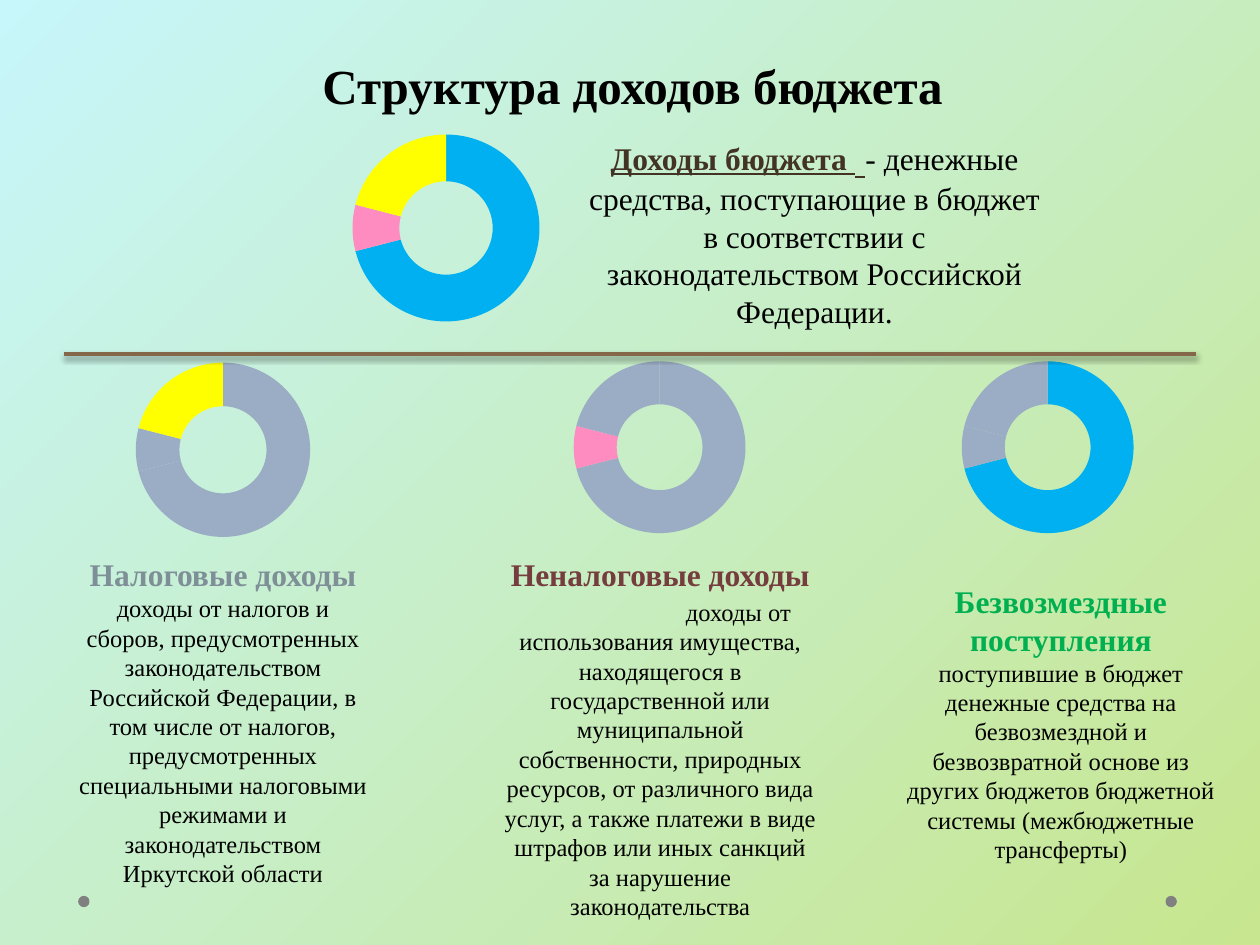
"""Build a slide on the structure of budget revenues with four doughnut charts."""
from dataclasses import dataclass
from typing import Optional

from lxml.etree import SubElement
from pptx import Presentation
from pptx.chart.data import CategoryChartData
from pptx.dml.color import RGBColor
from pptx.enum.chart import XL_CHART_TYPE
from pptx.enum.shapes import MSO_CONNECTOR, MSO_SHAPE
from pptx.enum.text import MSO_ANCHOR, PP_ALIGN
from pptx.oxml.ns import qn
from pptx.util import Inches, Pt


@dataclass(frozen=True)
class Theme:
    font: str = "Times New Roman"
    accent_font: str = "TeX Gyre Pagella"
    title_size: int = 28
    heading_size: int = 18
    gap_size: int = 24
    body_size: int = 14
    chart_size: int = 10
    text: str = "000000"
    term: str = "423324"
    tax: str = "7E8F97"
    non_tax: str = "753D3D"
    transfers: str = "00B050"
    muted: str = "9BADC4"
    blue: str = "00B0F0"
    pink: str = "FE8CC0"
    yellow: str = "FFFF00"
    rule: str = "846648"
    dot: str = "808080"
    background: tuple[str, str] = ("C7F6FB", "C7E68F")


@dataclass(frozen=True)
class Area:
    left: float
    top: float
    width: float
    height: float

    def lengths(self) -> tuple:
        return tuple(Inches(n) for n in (self.left, self.top, self.width, self.height))


@dataclass(frozen=True)
class Doughnut:
    area: Area
    colors: tuple[str, str, str]


@dataclass(frozen=True)
class Revenue:
    doughnut: Doughnut
    area: Area
    heading: str
    color: str
    body: str
    indent: float = 0
    space_before: float = 0


THEME = Theme()
SHARES = (71, 8, 21)
TOTAL = Doughnut(Area(1.77, 0.93, 3.54, 1.76), (THEME.blue, THEME.pink, THEME.yellow))
REVENUES = (
    Revenue(
        Doughnut(Area(0.21, 2.74, 3.12, 1.66), (THEME.muted, THEME.muted, THEME.yellow)),
        Area(0.51, 4.36, 2.52, 2.76), "Налоговые доходы", THEME.tax,
        "доходы от налогов и сборов, предусмотренных законодательством Российской "
        "Федерации, в том числе от налогов, предусмотренных специальными налоговыми "
        "режимами и законодательством Иркутской области",
    ),
    Revenue(
        Doughnut(Area(3.7, 2.73, 3.07, 1.64), (THEME.muted, THEME.pink, THEME.muted)),
        Area(3.9, 4.36, 2.68, 2.76), "Неналоговые доходы", THEME.non_tax,
        "доходы от использования имущества, находящегося в государственной или "
        "муниципальной собственности, природных ресурсов, от различного вида услуг, "
        "а также платежи в виде штрафов или иных санкций за нарушение законодательства",
        indent=1.24, space_before=2,
    ),
    Revenue(
        Doughnut(Area(6.85, 2.73, 2.93, 1.64), (THEME.blue, THEME.muted, THEME.muted)),
        Area(7.06, 4.57, 2.72, 2.36), "Безвозмездные поступления", THEME.transfers,
        "поступившие в бюджет денежные средства на безвозмездной и безвозвратной "
        "основе из других бюджетов бюджетной системы (межбюджетные трансферты)",
    ),
)


def style(font, size: int, color: str, bold: bool = False, name: str = THEME.font) -> None:
    font.name, font.size, font.bold = name, Pt(size), bold
    font.color.rgb = RGBColor.from_string(color)


def add_box(page, area: Area, anchor=MSO_ANCHOR.TOP):
    frame = page.shapes.add_textbox(*area.lengths()).text_frame
    frame.word_wrap = True
    frame.vertical_anchor = anchor
    frame.paragraphs[0].alignment = PP_ALIGN.CENTER
    return frame


def add_doughnut(page, doughnut: Doughnut) -> None:
    chart_data = CategoryChartData()
    chart_data.categories = ["1", "2", "3"]
    chart_data.add_series("Series 1", SHARES)
    chart = page.shapes.add_chart(
        XL_CHART_TYPE.DOUGHNUT, *doughnut.area.lengths(), chart_data).chart
    chart.has_title = chart.has_legend = False
    style(chart.font, THEME.chart_size, THEME.text, name=THEME.accent_font)
    plot = chart.plots[0]
    plot.vary_by_categories = True
    for index, color in enumerate(doughnut.colors):
        slice_format = plot.series[0].points[index].format
        slice_format.fill.solid()
        slice_format.fill.fore_color.rgb = RGBColor.from_string(color)
        slice_format.line.fill.background()


def add_revenue(page, revenue: Revenue) -> None:
    add_doughnut(page, revenue.doughnut)
    frame = add_box(page, revenue.area)
    heading = frame.paragraphs[0]
    heading.text = revenue.heading
    style(heading.font, THEME.heading_size, revenue.color, bold=True)
    body = frame.add_paragraph()
    body.text = revenue.body
    body.alignment = PP_ALIGN.CENTER
    body.space_before = Pt(revenue.space_before)
    style(body.font, THEME.body_size, THEME.text)
    if revenue.indent:
        body._p.get_or_add_pPr().set("indent", str(Inches(revenue.indent)))


def add_title(page) -> None:
    para = add_box(page, Area(0.52, 0.31, 9, 0.65), MSO_ANCHOR.BOTTOM).paragraphs[0]
    para.text = "Структура доходов бюджета"
    para.line_spacing = Pt(58)
    style(para.font, THEME.title_size, THEME.text, bold=True)


def add_definition(page) -> None:
    para = add_box(page, Area(4.5, 0.97, 3.93, 2.02)).paragraphs[0]
    spans = (
        ("Доходы бюджета ", THEME.heading_size, THEME.term, True, THEME.font),
        (" ", THEME.gap_size, THEME.term, True, THEME.accent_font),
        ("- денежные средства, поступающие в бюджет в соответствии с "
         "законодательством Российской Федерации.",
         THEME.heading_size, THEME.text, False, THEME.font),
    )
    for text, size, color, is_term, name in spans:
        span = para.add_run()
        span.text = text
        style(span.font, size, color, is_term, name)
        span.font.underline = is_term


def add_rule(page, left: float, right: float, top: float) -> None:
    rule = page.shapes.add_connector(
        MSO_CONNECTOR.STRAIGHT, Inches(left), Inches(top), Inches(right), Inches(top))
    rule.line.color.rgb = RGBColor.from_string(THEME.rule)
    rule.line.width = Pt(2.25)
    effects = SubElement(rule._element.spPr, qn("a:effectLst"))
    shadow = SubElement(effects, qn("a:outerShdw"), blurRad=str(Pt(3.1)),
                        dist=str(Pt(1.6)), dir="5400000", rotWithShape="0")
    color = SubElement(shadow, qn("a:srgbClr"), val=THEME.text)
    SubElement(color, qn("a:alpha"), val="38000")


def add_dot(page, area: Area) -> None:
    dot = page.shapes.add_shape(MSO_SHAPE.OVAL, *area.lengths())
    dot.shadow.inherit = False
    dot.fill.solid()
    dot.fill.fore_color.rgb = RGBColor.from_string(THEME.dot)
    dot.line.fill.background()


def paint_background(page, colors: Optional[tuple[str, str]] = None) -> None:
    fill = page.background.fill
    fill.gradient()
    fill.gradient_angle = 315
    for stop, color in zip(fill.gradient_stops, colors or THEME.background):
        stop.color.rgb = RGBColor.from_string(color)


def main() -> None:
    deck = Presentation()
    deck.slide_width, deck.slide_height = Inches(10), Inches(7.5)
    page = deck.slides.add_slide(deck.slide_layouts[6])
    paint_background(page)
    for left in (9.25, 0.62):
        add_dot(page, Area(left, 7.11, 0.09, 0.09))
    add_title(page)
    for revenue in REVENUES:
        add_revenue(page, revenue)
    add_definition(page)
    add_doughnut(page, TOTAL)
    add_rule(page, 0.51, 9.49, 2.81)
    deck.save("out.pptx")


if __name__ == "__main__":
    main()
